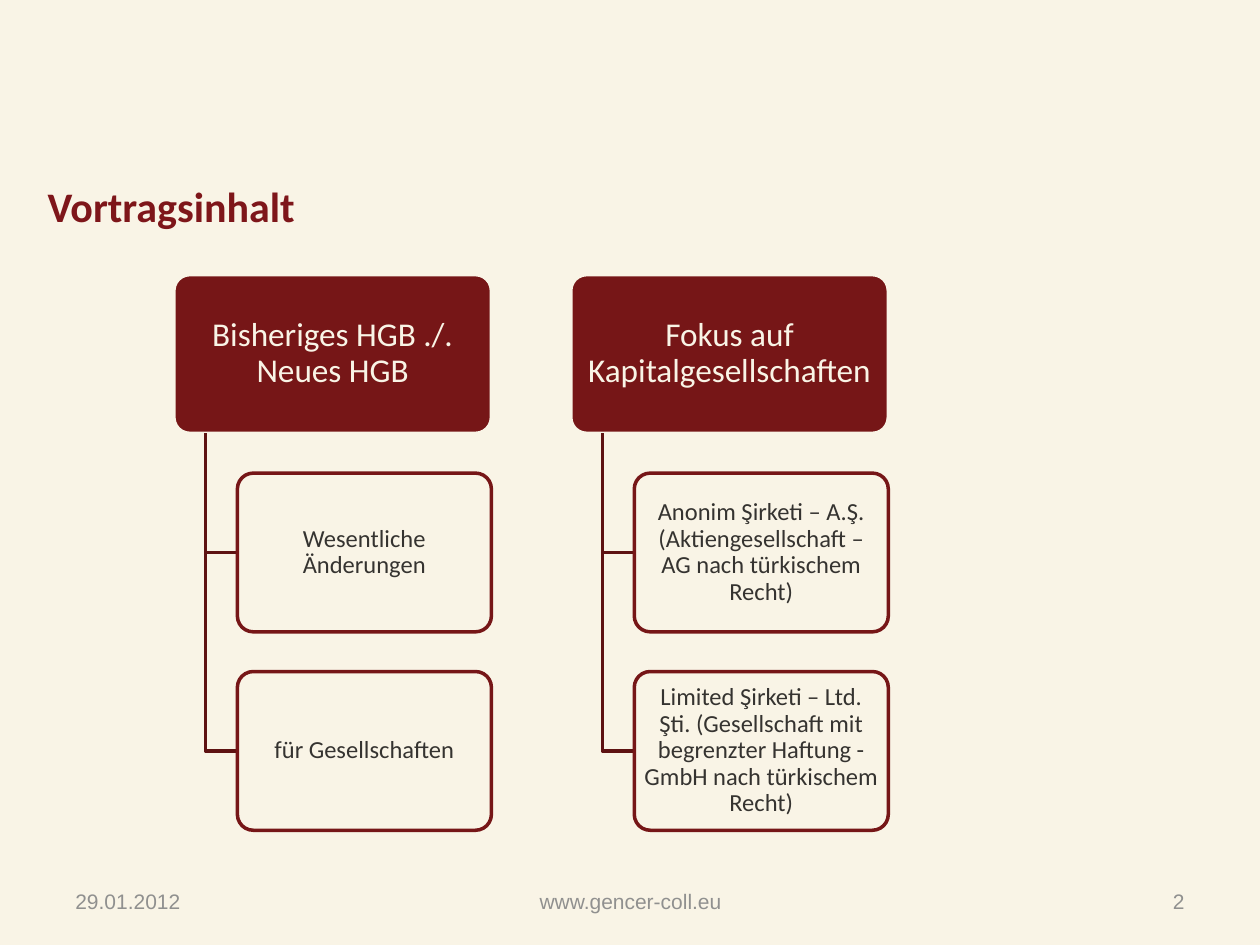
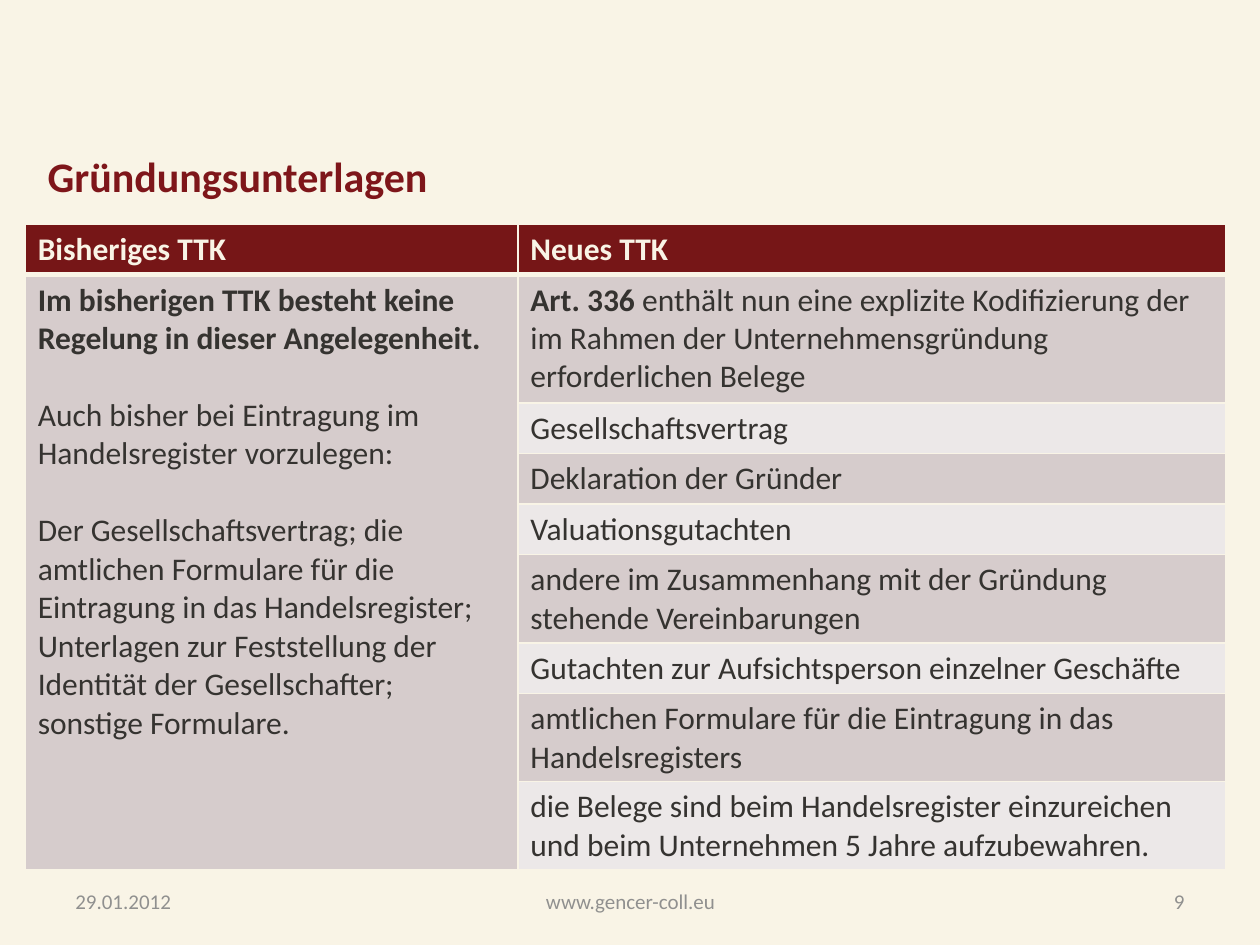
from lxml import etree
from pptx import Presentation
from pptx.dml.color import RGBColor
from pptx.enum.shapes import MSO_SHAPE
from pptx.enum.text import MSO_ANCHOR, PP_ALIGN
from pptx.oxml.ns import qn
from pptx.util import Inches, Pt

ROUNDED = MSO_SHAPE.ROUNDED_RECTANGLE
TOP, MIDDLE = MSO_ANCHOR.TOP, MSO_ANCHOR.MIDDLE
LEFT, CENTER, RIGHT = PP_ALIGN.LEFT, PP_ALIGN.CENTER, PP_ALIGN.RIGHT

# Shared look
WIDTH, HEIGHT = Inches(10), Inches(7.5)
CREAM, WINE, DARK_WINE, TITLE_RED = "F9F4E6", "761617", "5E1212", "7E161A"
INK, GREY = "353330", "90908F"
BANDS = ("D6CCCC", "ECE8E8")
TITLE = {"name": "Calibri", "size": Pt(24), "bold": True}
TOPIC = {"name": "Calibri", "size": Pt(19)}
POINT = {"name": "Calibri", "size": Pt(14)}
CELL = {"name": "Calibri", "size": Pt(18), "bold": False}
BOLD_CELL = {**CELL, "bold": True}

# Topic tree: every length follows from the card height
CARD = Inches(1.26)
TREE_LEFT, TREE_TOP = Inches(1.38), Inches(2.18)
TOPIC_WIDTH, COLUMN_STEP, ROW_STEP = 2 * CARD, 2.5 * CARD, 1.25 * CARD
TOPICS = [
    ("Bisheriges HGB ./. Neues HGB",
     ["Wesentliche Änderungen", "für Gesellschaften"]),
    ("Fokus auf Kapitalgesellschaften",
     ["Anonim Şirketi – A.Ş. (Aktiengesellschaft – AG nach türkischem Recht)",
      "Limited Şirketi – Ltd. Şti. (Gesellschaft mit begrenzter Haftung - "
      "GmbH nach türkischem Recht)"]),
]

# Comparison table: right-hand entries with their number of lines
LINE_HEIGHTS = {1: 0.38, 2: 0.68, 3: 1.02}
HEADINGS = ("Bisheriges TTK", "Neues TTK")
OLD_LAW = [  # text, format, space before
    ("Im bisherigen TTK besteht keine Regelung in dieser Angelegenheit.", BOLD_CELL, 0),
    ("Auch bisher bei Eintragung im Handelsregister vorzulegen:", CELL, 22),
    ("Der Gesellschaftsvertrag; die amtlichen Formulare für die Eintragung "
     "in das Handelsregister;", CELL, 22),
    ("Unterlagen zur Feststellung der Identität der Gesellschafter; "
     "sonstige Formulare.", CELL, 0),
]
NEW_LAW = [
    (3, [("Art. 336 ", BOLD_CELL),
         ("enthält nun eine explizite Kodifizierung der im Rahmen der "
          "Unternehmensgründung erforderlichen Belege", CELL)]),
    (1, [("Gesellschaftsvertrag", CELL)]),
    (1, [("Deklaration der Gründer", CELL)]),
    (1, [("Valuationsgutachten", CELL)]),
    (2, [("andere im Zusammenhang mit der Gründung stehende Vereinbarungen", CELL)]),
    (1, [("Gutachten zur Aufsichtsperson einzelner Geschäfte", CELL)]),
    (2, [("amtlichen Formulare für die Eintragung in das Handelsregisters", CELL)]),
    (2, [("die Belege sind beim Handelsregister einzureichen und beim "
          "Unternehmen 5 Jahre aufzubewahren.", CELL)]),
]


def paint(target, color):
    """Give a fill a solid colour, or a font its colour."""
    if hasattr(target, "solid"):
        target.solid()
        target.fore_color.rgb = RGBColor.from_string(color)
    else:
        target.color.rgb = RGBColor.from_string(color)


def write(para, text, look, color):
    span = para.add_run()
    span.text = text
    for name, value in look.items():
        setattr(span.font, name, value)
    paint(span.font, color)


def add_label(page, place, text, look, color, align=LEFT, anchor=TOP):
    """Text box placed by shares of the slide's size."""
    left, top, width, height = place
    box = page.shapes.add_textbox(int(left * WIDTH), int(top * HEIGHT),
                                  int(width * WIDTH), int(height * HEIGHT))
    box.text_frame.word_wrap = True
    box.text_frame.vertical_anchor = anchor
    para = box.text_frame.paragraphs[0]
    para.alignment = align
    write(para, text, look, color)


def add_page(deck, title, title_top, number, footer_font):
    page = deck.slides.add_slide(deck.slide_layouts[6])
    paint(page.background.fill, CREAM)
    look = {"name": footer_font, "size": Pt(12)}
    footers = [("29.01.2012", 0.05, 0.233, LEFT),
               ("www.gencer-coll.eu", 0.342, 0.317, CENTER),
               (number, 0.717, 0.233, RIGHT)]
    for text, left, width, align in footers:
        add_label(page, (left, 0.927, width, 0.053), text, look, GREY, align, MIDDLE)
    add_label(page, (0.028, title_top, 0.787, 0.063), title, TITLE, TITLE_RED)
    return page


def add_card(page, left, top, width, text, look, colors, inset):
    fill, line, ink = colors
    card = page.shapes.add_shape(ROUNDED, int(left), int(top), int(width), CARD)
    card.adjustments[0] = 0.1
    card.shadow.inherit = False
    paint(card.fill, fill)
    paint(card.line.fill, line)
    card.line.width = Pt(2)
    frame = card.text_frame
    frame.word_wrap = True
    frame.vertical_anchor = MIDDLE
    margins = {"margin_left": inset, "margin_right": inset,
               "margin_top": inset - 0.01, "margin_bottom": inset - 0.01}
    for side, length in margins.items():
        setattr(frame, side, Inches(length))
    para = frame.paragraphs[0]
    para.alignment = CENTER
    para.line_spacing = 0.9
    write(para, text, look, ink)


def add_elbow(page, left, top, right, bottom):
    outline = page.shapes.build_freeform(int(left), int(top))
    outline.add_line_segments([(int(left), int(bottom)), (int(right), int(bottom))],
                              close=False)
    elbow = outline.convert_to_shape()
    elbow.shadow.inherit = False
    elbow.fill.background()
    paint(elbow.line.fill, DARK_WINE)
    elbow.line.width = Pt(2)


def add_topic(page, column, topic, points):
    left = TREE_LEFT + column * COLUMN_STEP
    point_left = left + 0.2 * TOPIC_WIDTH
    add_card(page, left, TREE_TOP, TOPIC_WIDTH, topic, TOPIC, (WINE, CREAM, CREAM), 0.04)
    for row, point in enumerate(points, start=1):
        top = TREE_TOP + row * ROW_STEP
        add_elbow(page, left + 0.1 * TOPIC_WIDTH, TREE_TOP + CARD,
                  point_left, top + CARD / 2)
        add_card(page, point_left, top, 0.8 * TOPIC_WIDTH, point, POINT,
                 (CREAM, WINE, INK), 0.03)


def add_borders(cell, **widths):
    """Cream borders, 1 pt unless a side (L, R, T, B) is given a width."""
    properties = cell._tc.get_or_add_tcPr()
    for side in "LRTB":
        line = etree.SubElement(properties, qn(f"a:ln{side}"),
                                w=str(Pt(widths.get(side, 1))))
        fill = etree.SubElement(line, qn("a:solidFill"))
        etree.SubElement(fill, qn("a:srgbClr"), val=CREAM)


def add_comparison(page):
    heights = [LINE_HEIGHTS[lines] for lines in [1] + [entry[0] for entry in NEW_LAW]]
    table = page.shapes.add_table(len(heights), 2, Inches(0.2), Inches(1.78),
                                  Inches(9.53), Inches(sum(heights))).table
    for column, width in zip(table.columns, (3.91, 5.62)):
        column.width = Inches(width)
    for index, height in enumerate(heights):
        table.rows[index].height = Inches(height)
        for column in range(2):
            cell = table.cell(index, column)
            add_borders(cell, **{0: {"B": 3}, 1: {"T": 3}}.get(index, {}))
            band = BANDS[0] if column == 0 else BANDS[(index - 1) % 2]
            paint(cell.fill, band if index else WINE)

    # Header row and right column
    for column, heading in enumerate(HEADINGS):
        write(table.cell(0, column).text_frame.paragraphs[0], heading, BOLD_CELL, CREAM)
    for index, (_, spans) in enumerate(NEW_LAW, start=1):
        for text, look in spans:
            write(table.cell(index, 1).text_frame.paragraphs[0], text, look, INK)

    # Left column is one tall cell
    old = table.cell(1, 0)
    old.merge(table.cell(len(NEW_LAW), 0))
    for index, (text, look, gap) in enumerate(OLD_LAW):
        frame = old.text_frame
        para = frame.add_paragraph() if index else frame.paragraphs[0]
        para.space_before = Pt(gap)
        write(para, text, look, INK)


def main():
    deck = Presentation()
    deck.slide_width, deck.slide_height = WIDTH, HEIGHT

    contents = add_page(deck, "Vortragsinhalt", 0.185, "2", "Arial")
    for column, (topic, points) in enumerate(TOPICS):
        add_topic(contents, column, topic, points)

    documents = add_page(deck, "Gründungsunterlagen", 0.153, "9", "Calibri")
    add_comparison(documents)

    deck.save("out.pptx")


if __name__ == "__main__":
    main()
